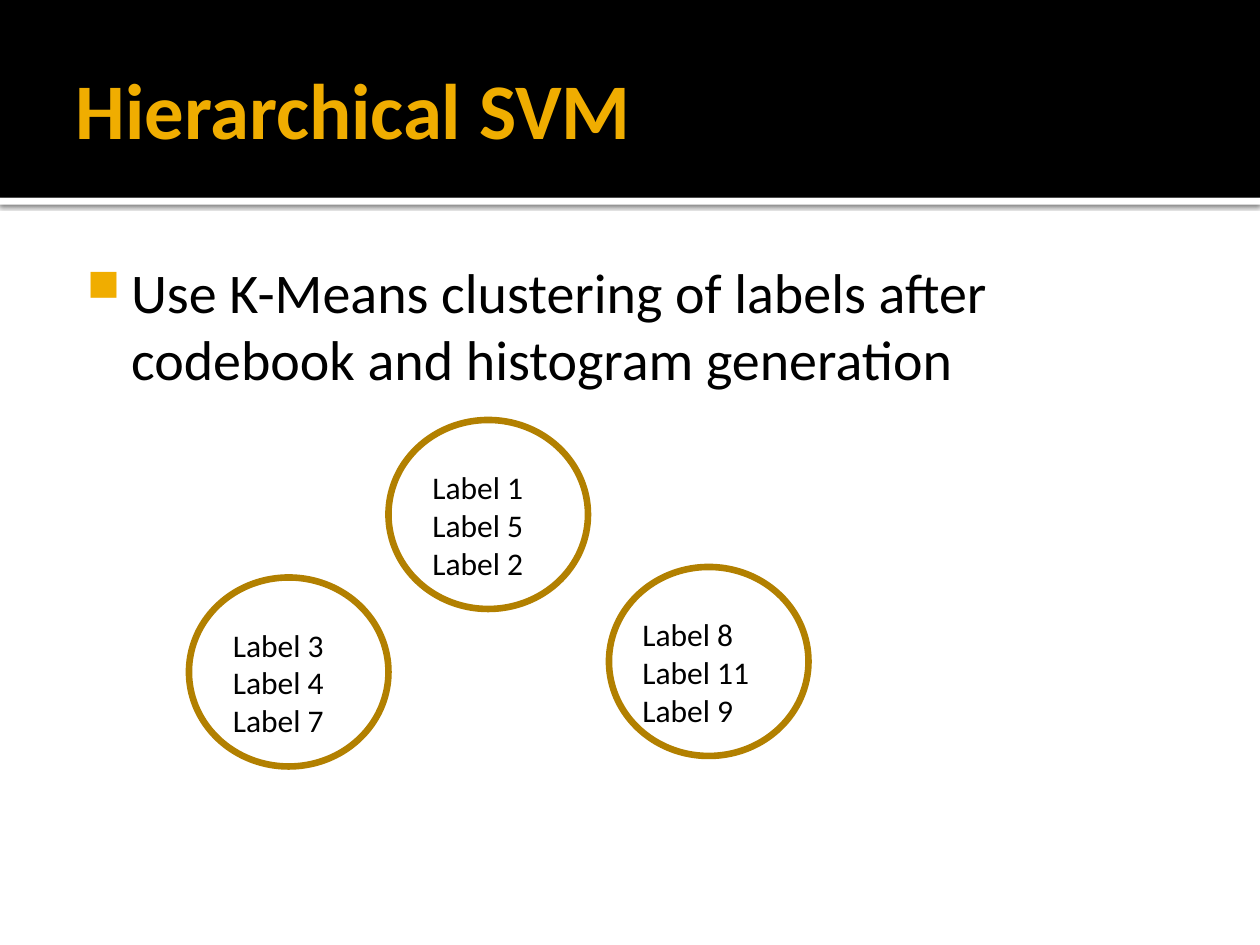
from dataclasses import dataclass

from lxml import etree
from pptx import Presentation
from pptx.dml.color import RGBColor
from pptx.enum.shapes import MSO_SHAPE as Shape
from pptx.enum.text import MSO_ANCHOR as Anchor, MSO_AUTO_SIZE as AutoSize, PP_ALIGN as Align
from pptx.oxml import parse_xml
from pptx.oxml.ns import nsdecls, qn
from pptx.util import Pt

COLORS = {"black": "000000", "white": "FFFFFF", "gold": "F0AD00", "ring": "B28000"}
FONT = "Calibri"
CIRCLE_W, CIRCLE_H, LABEL_H = 114, 108, 73


@dataclass
class Cluster:
    left: float
    top: float
    text_left: float
    text_top: float
    text_width: float
    labels: list[str]


CLUSTERS = [
    Cluster(222, 240, 240, 264, 78, ["Label 1", "Label 5", "Label 2"]),
    Cluster(348, 324, 360, 348, 90, ["Label 8", "Label 11", "Label 9"]),
    Cluster(108, 330, 126, 354, 84, ["Label 3", "Label 4", "Label 7"]),
]


def rgb(name: str) -> RGBColor:
    return RGBColor.from_string(COLORS[name])


def format_text(tf, size: float, color: str, bold: bool = False) -> None:
    for p in tf.paragraphs:
        p.alignment = Align.LEFT
        for r in p.runs:
            r.font.name, r.font.size, r.font.bold = FONT, Pt(size), bold
            r.font.color.rgb = rgb(color)


def set_insets(tf, left: float, top: float, right: float, bottom: float) -> None:
    tf.margin_left, tf.margin_top = Pt(left), Pt(top)
    tf.margin_right, tf.margin_bottom = Pt(right), Pt(bottom)


def add_filled(s, kind, left: float, top: float, width: float, height: float, fill: str):
    sp = s.shapes.add_shape(kind, Pt(left), Pt(top), Pt(width), Pt(height))
    sp.shadow.inherit = False
    sp.fill.solid()
    sp.fill.fore_color.rgb = rgb(fill)
    sp.line.fill.background()
    return sp


def add_text(s, left: float, top: float, width: float, height: float, text: str, size: float):
    tf = s.shapes.add_textbox(Pt(left), Pt(top), Pt(width), Pt(height)).text_frame
    tf.word_wrap = True
    tf.text = text
    format_text(tf, size, "black")
    return tf


def add_shadow(sp) -> None:
    effects = sp._element.spPr.find(qn("a:effectLst"))
    effects.append(parse_xml(
        f'<a:outerShdw {nsdecls("a")} blurRad="{Pt(2.5)}" dist="{Pt(0.8)}" dir="5400000">'
        f'<a:srgbClr val="{COLORS["black"]}"><a:alpha val="60000"/></a:srgbClr></a:outerShdw>'))


def add_bullet(p, char: str, color: str, left: float, hang: float) -> None:
    pPr = p._p.get_or_add_pPr()
    pPr.set("marL", str(Pt(left)))
    pPr.set("indent", str(-Pt(hang)))
    bullet_color = etree.SubElement(pPr, qn("a:buClr"))
    etree.SubElement(bullet_color, qn("a:srgbClr"), val=COLORS[color])
    etree.SubElement(pPr, qn("a:buSzPct"), val="80000")
    etree.SubElement(pPr, qn("a:buChar"), char=char)


def add_cluster_circle(s, c: Cluster) -> None:
    sp = add_filled(s, Shape.OVAL, c.left, c.top, CIRCLE_W, CIRCLE_H, "white")
    sp.line.color.rgb = rgb("ring")
    sp.line.width = Pt(3.78)


def add_cluster_labels(s, c: Cluster) -> None:
    tf = add_text(s, c.text_left, c.text_top, c.text_width, LABEL_H, "\n".join(c.labels), 18)
    tf.auto_size = AutoSize.SHAPE_TO_FIT_TEXT


def main() -> None:
    prs = Presentation()
    prs.slide_width, prs.slide_height = Pt(720), Pt(540)
    s = prs.slides.add_slide(prs.slide_layouts[5])

    # Header band with a white, shadowed edge
    add_shadow(add_filled(s, Shape.RECTANGLE, 0, 113, 720, 4, "white"))
    add_filled(s, Shape.RECTANGLE, 0, 0, 720, 113, "black")

    # Title, raised above the band
    title = s.shapes.title
    title.left, title.top, title.width, title.height = Pt(36), Pt(12), Pt(648), Pt(99)
    s.shapes._spTree.append(title._element)
    tf = title.text_frame
    tf.text = "Hierarchical SVM"
    tf.vertical_anchor = Anchor.MIDDLE
    set_insets(tf, 7.2, 3.6, 3.6, 3.6)
    format_text(tf, 45, "gold", bold=True)

    # Bullet text
    tf = add_text(s, 36, 139.7, 648, 364,
                  "Use K-Means clustering of labels after codebook and histogram generation", 32)
    set_insets(tf, 4.3, 7.2, 7.2, 3.6)
    add_bullet(tf.paragraphs[0], "■", "gold", 34.6, 25.2)

    # Label clusters: circles behind, labels in front
    for c in CLUSTERS:
        add_cluster_circle(s, c)
    for c in CLUSTERS:
        add_cluster_labels(s, c)

    prs.save("out.pptx")


if __name__ == "__main__":
    main()
